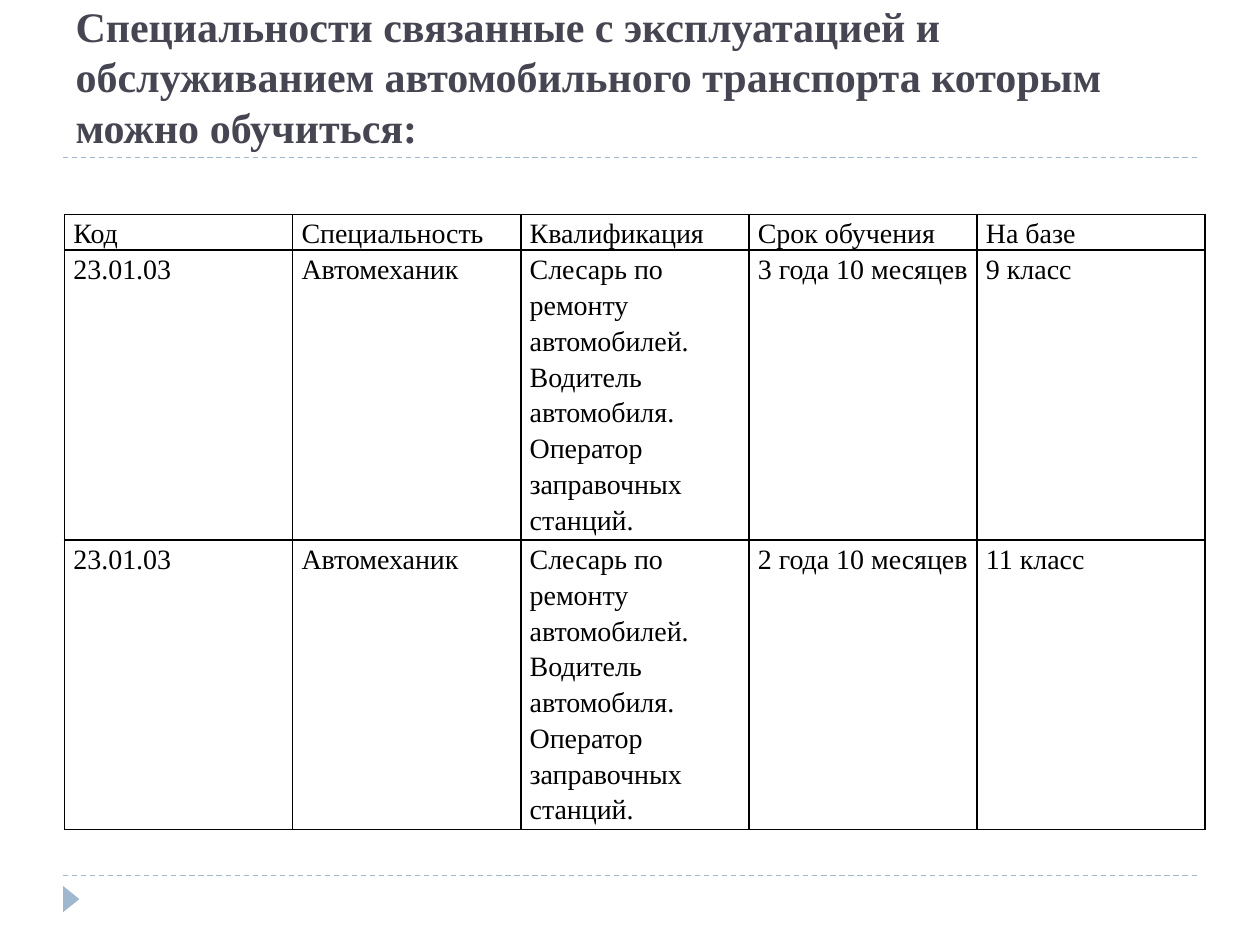
from lxml import etree
from pptx import Presentation
from pptx import util as u
from pptx.dml import color
from pptx.enum import dml, shapes, text
from pptx.oxml import ns

COLORS = {"heading": "464653", "accent": "9FB8CD", "ink": "000000"}
FONT = "Times New Roman"
QUALIFICATION = (
    "Слесарь по ремонту автомобилей. Водитель автомобиля. "
    "Оператор заправочных станций."
)
SPECIALTIES = [
    ["Код", "Специальность", "Квалификация", "Срок обучения", "На базе"],
    ["23.01.03", "Автомеханик", QUALIFICATION, "3 года 10 месяцев", "9 класс"],
    ["23.01.03", "Автомеханик", QUALIFICATION, "2 года 10 месяцев", "11 класс"],
]


def apply(target, formats):
    for name, value in formats.items():
        setattr(target, name, value)


def rgb(name):
    return color.RGBColor.from_string(COLORS[name])


class SlideBuilder:
    title_font = {"name": FONT, "size": u.Pt(24), "bold": True}
    cell_font = {"name": FONT, "size": u.Pt(16), "bold": False}
    cell_margins = {
        "margin_left": u.Cm(0.18),
        "margin_right": u.Cm(0.18),
        "margin_top": 0,
        "margin_bottom": 0,
    }

    def __init__(self, slide):
        self.slide = slide

    def fill_text(self, frame, words, font, ink, **paragraph_formats):
        frame.text = words
        paragraph = frame.paragraphs[0]
        apply(paragraph, paragraph_formats)
        run = paragraph.runs[0]
        apply(run.font, font)
        run.font.color.rgb = rgb(ink)

    def title(self, words, left, top, width, height):
        heading = self.slide.shapes.title
        apply(heading, {"left": u.Cm(left), "top": u.Cm(top),
                        "width": u.Cm(width), "height": u.Cm(height)})
        self.fill_text(heading.text_frame, words, self.title_font, "heading",
                       alignment=text.PP_ALIGN.LEFT)
        apply(heading.text_frame, {
            "word_wrap": True,
            "auto_size": text.MSO_AUTO_SIZE.NONE,
            "vertical_anchor": text.MSO_ANCHOR.BOTTOM,
        })

    def divider(self, left, right, y):
        rule = self.slide.shapes.add_connector(
            shapes.MSO_CONNECTOR.STRAIGHT, u.Cm(left), u.Cm(y), u.Cm(right), u.Cm(y))
        apply(rule.line, {"width": u.Pt(0.75), "dash_style": dml.MSO_LINE.DASH})
        rule.line.color.rgb = rgb("accent")
        etree.SubElement(rule._element.spPr, ns.qn("a:effectLst"))

    def marker(self, left, top, width, height):
        arrow = self.slide.shapes.add_shape(
            shapes.MSO_SHAPE.ISOSCELES_TRIANGLE,
            u.Cm(left), u.Cm(top), u.Cm(width), u.Cm(height))
        arrow.rotation = 90
        arrow.shadow.inherit = False
        arrow.fill.solid()
        arrow.fill.fore_color.rgb = rgb("accent")
        arrow.line.fill.background()

    def borders(self, cell):
        properties = cell._tc.get_or_add_tcPr()
        for position, side in enumerate(("lnL", "lnR", "lnT", "lnB")):
            border = etree.Element(ns.qn(f"a:{side}"), w=str(u.Pt(1)))
            fill = etree.SubElement(border, ns.qn("a:solidFill"))
            etree.SubElement(fill, ns.qn("a:srgbClr"), val=COLORS["ink"])
            properties.insert(position, border)

    def table(self, rows, left, top, column_width, row_heights):
        grid = self.slide.shapes.add_table(
            len(rows), len(rows[0]), u.Cm(left), u.Cm(top),
            u.Cm(column_width * len(rows[0])), u.Cm(sum(row_heights))).table
        apply(grid, {"first_row": False, "horz_banding": False})
        for column in grid.columns:
            column.width = u.Cm(column_width)
        for row, height, entries in zip(grid.rows, row_heights, rows):
            row.height = u.Cm(height)
            for cell, words in zip(row.cells, entries):
                apply(cell, self.cell_margins)
                cell.fill.background()
                self.borders(cell)
                self.fill_text(cell.text_frame, words, self.cell_font, "ink",
                               line_spacing=1.15)


def main():
    deck = Presentation()
    apply(deck, {"slide_width": u.Cm(25.4), "slide_height": u.Cm(19.05)})
    builder = SlideBuilder(deck.slides.add_slide(deck.slide_layouts[5]))
    for y in (17.65, 3.18):
        builder.divider(1.27, 24.13, y)
    builder.marker(1.17, 17.96, 0.53, 0.33)
    builder.title(
        "Специальности связанные с эксплуатацией и обслуживанием "
        "автомобильного транспорта которым можно обучиться:",
        1.27, 0.64, 22.86, 2.54)
    builder.table(SPECIALTIES, 1.3, 4.32, 4.6, [0.66, 5.84, 5.84])
    deck.save("out.pptx")


if __name__ == "__main__":
    main()
